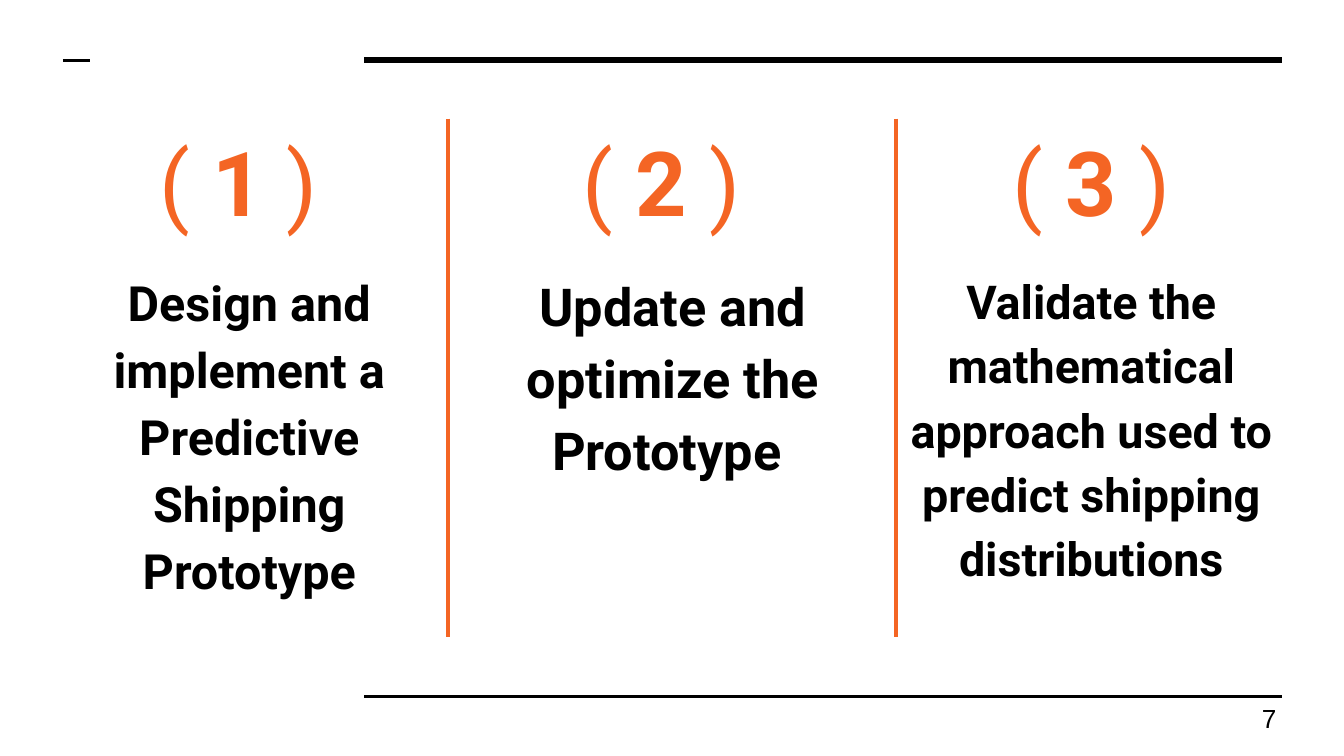
import pptx
import pptx.dml.color
import pptx.enum.shapes
import pptx.enum.text
import pptx.oxml
import pptx.oxml.ns
import pptx.util
from pptx.util import Cm

ORANGE, BLACK = "F46524", "000000"

# left, width, number, space after the bracket, goal, goal size, end of goal
GOALS = [
    (1.5, 6.43, " 1 ", ") ",
     "Design and implement a Predictive Shipping Prototype", 26, ""),
    (9.5, 6.43, " 2 ", ") ", "Update and optimize the Prototype", 28, " "),
    (16.94, 7.37, " 3 ", ")",
     "Validate the mathematical approach used to predict shipping distributions", 25, ""),
]
GOAL_TOP, GOAL_HEIGHT = 1.85, 9.47

# x1, y1, x2, y2, colour, weight
FRAME_RULES = [
    (6.88, 1.14, 24.23, 1.14, BLACK, 3),
    (6.88, 13.16, 24.23, 13.16, BLACK, 1.5),
    (1.19, 1.14, 1.7, 1.14, BLACK, 1.5),
]
DIVIDERS = [(x, 2.24, x, 12.04, ORANGE, 2.25) for x in (8.46, 16.94)]


def colour(value):
    return pptx.dml.color.RGBColor.from_string(value)


def add_rule(page, x1, y1, x2, y2, line_colour, weight):
    rule = page.shapes.add_connector(
        pptx.enum.shapes.MSO_CONNECTOR.STRAIGHT, Cm(x1), Cm(y1), Cm(x2), Cm(y2))
    rule.line.color.rgb = colour(line_colour)
    rule.line.width = pptx.util.Pt(weight)
    properties = rule.element.find(pptx.oxml.ns.qn("p:spPr"))
    properties.append(pptx.oxml.parse_xml(
        f"<a:effectLst {pptx.oxml.ns.nsdecls('a')}/>"))


def add_box(page, left, top, width, height):
    """Add a wrapping text box with equal margins and return its text frame."""
    frame = page.shapes.add_textbox(Cm(left), Cm(top), Cm(width), Cm(height)).text_frame
    frame.word_wrap = True
    for side in ("left", "top", "right", "bottom"):
        setattr(frame, f"margin_{side}", Cm(0.25))
    return frame


def add_span(para, text, size, text_colour, bold=False, name="Roboto"):
    span = para.add_run()
    span.text = text
    for key, value in {"size": pptx.util.Pt(size), "bold": bold, "name": name}.items():
        setattr(span.font, key, value)
    span.font.color.rgb = colour(text_colour)


def add_goal(page, left, width, number, closing, goal, size, ending):
    frame = add_box(page, left, GOAL_TOP, width, GOAL_HEIGHT)
    heading, body = frame.paragraphs[0], frame.add_paragraph()
    layout = {"alignment": pptx.enum.text.PP_ALIGN.CENTER,
              "line_spacing": 1.15, "space_after": pptx.util.Pt(16)}
    for para in (heading, body):
        for key, value in layout.items():
            setattr(para, key, value)
    for text, bold in (("(", False), (number, True), (closing, False)):
        add_span(heading, text, 48, ORANGE, bold)
    add_span(body, goal, size, BLACK, True)
    if ending:
        add_span(body, ending, 26, BLACK, True)


def main():
    deck = pptx.Presentation()
    deck.slide_width, deck.slide_height = Cm(25.4), Cm(14.29)
    page = deck.slides.add_slide(deck.slide_layouts[6])

    for rule in FRAME_RULES:
        add_rule(page, *rule)
    for goal in GOALS:
        add_goal(page, *goal)
    for divider in DIVIDERS:
        add_rule(page, *divider)

    number = add_box(page, 23.6, 13.03, 1.52, 1.09)
    number.vertical_anchor = pptx.enum.text.MSO_ANCHOR.MIDDLE
    add_span(number.paragraphs[0], "7", 14, BLACK, name="Arial")

    deck.save("out.pptx")


if __name__ == "__main__":
    main()
